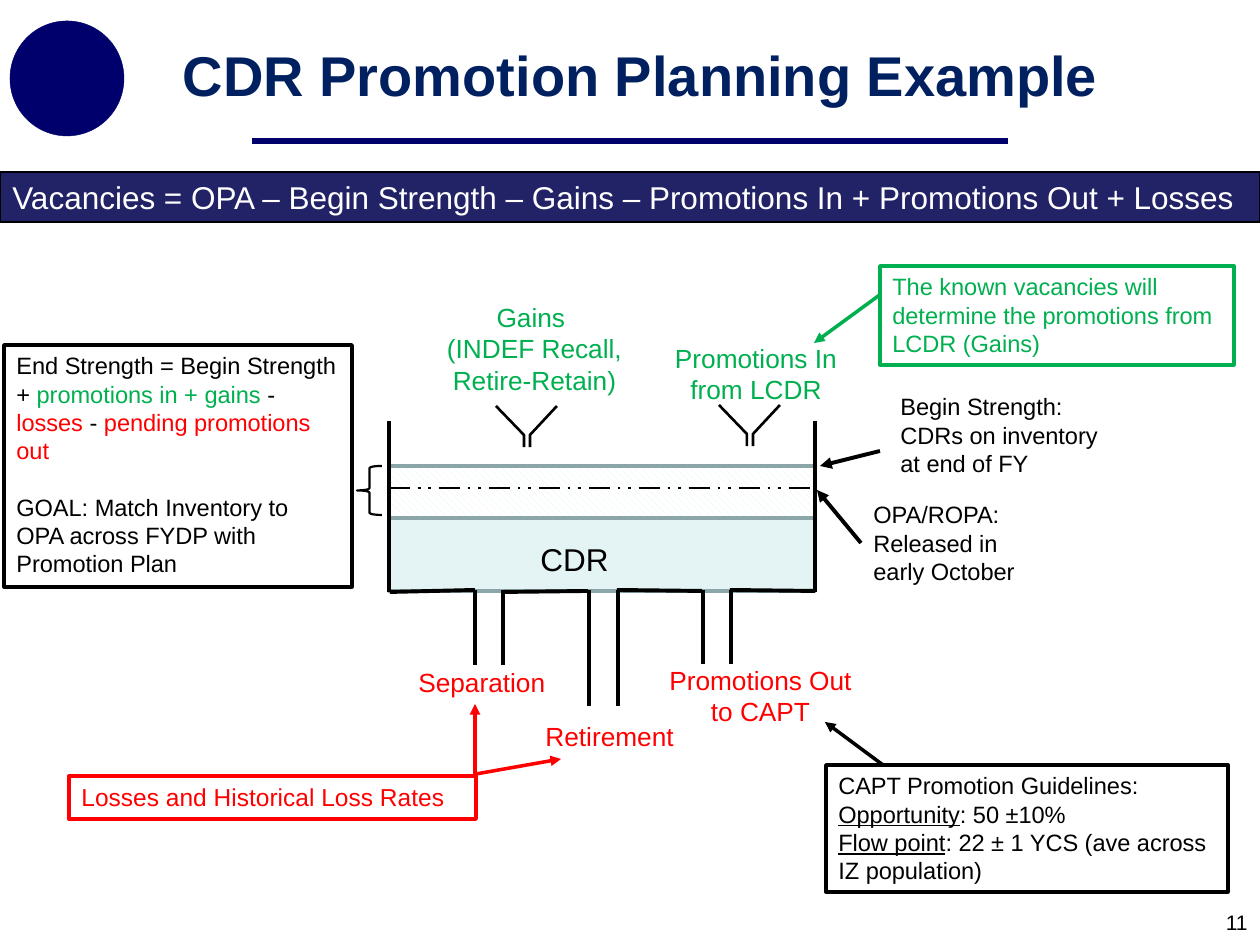
from pptx import Presentation
from pptx.dml.color import RGBColor
from pptx.enum.dml import MSO_LINE_DASH_STYLE, MSO_PATTERN_TYPE
from pptx.enum.shapes import MSO_CONNECTOR, MSO_SHAPE
from pptx.enum.text import MSO_ANCHOR, PP_ALIGN
from pptx.oxml.ns import qn
from pptx.util import Pt
from lxml.etree import SubElement

SCALE = 914400 / 126
BLACK = RGBColor(0, 0, 0)
WHITE = RGBColor(255, 255, 255)
RED = RGBColor(255, 0, 0)
GREEN = RGBColor(0, 176, 80)
TITLE_BLUE = RGBColor(0, 32, 96)
RULE_BLUE = RGBColor(0, 0, 108)
BANNER_BLUE = RGBColor(34, 34, 103)
WATER = RGBColor(228, 243, 244)
WATER_EDGE = RGBColor(138, 166, 168)


def emu(pixels):
    return round(pixels * SCALE)


def place(box, left, top, width, height):
    return [emu(value) for value in (box[0] + left, box[1] + top, width, height)]


def format_font(font, **values):
    color = values.pop("color", None)
    if color is not None:
        font.color.rgb = color
    for name, value in values.items():
        setattr(font, name, value)


def write(shape, paragraphs, size, color, align=PP_ALIGN.LEFT, gap=0):
    frame = shape.text_frame
    frame.word_wrap = True
    frame.vertical_anchor = MSO_ANCHOR.TOP
    for index, runs in enumerate(paragraphs):
        paragraph = frame.add_paragraph() if index else frame.paragraphs[0]
        paragraph.alignment = align
        if index and gap:
            paragraph.space_before = Pt(gap)
        for text, values in runs:
            run = paragraph.add_run()
            run.text = text
            format_font(run.font, **{"name": "Arial", "size": Pt(size), "color": color, **values})


def add_label(slide, box, bounds, lines, size, color, align=PP_ALIGN.LEFT):
    shape = slide.shapes.add_textbox(*place(box, *bounds))
    write(shape, [[(line, {})] for line in lines], size, color, align)
    return shape


def add_box(slide, box, bounds, line_color, width, fill=None, kind=MSO_SHAPE.RECTANGLE):
    shape = slide.shapes.add_shape(kind, *place(box, *bounds))
    shape.shadow.inherit = False
    if fill is None:
        shape.fill.background()
    else:
        shape.fill.solid()
        shape.fill.fore_color.rgb = fill
    shape.line.color.rgb = line_color
    shape.line.width = Pt(width)
    return shape


def add_line(slide, box, points, color=BLACK, width=2.25, arrow=False):
    left, top = box[:2]
    x1, y1, x2, y2 = points
    line = slide.shapes.add_connector(
        MSO_CONNECTOR.STRAIGHT, emu(left + x1), emu(top + y1), emu(left + x2), emu(top + y2))
    line.line.color.rgb = color
    line.line.width = Pt(width)
    properties = line._element.spPr
    if arrow:
        SubElement(properties.find(qn("a:ln")), qn("a:tailEnd"), type="triangle")
    SubElement(properties, qn("a:effectLst"))
    return line


def draw_header(slide, box):
    title = slide.shapes.title
    title.left, title.top, title.width, title.height = place(box, -72, 16, 1441, 116)
    write(title, [[("CDR Promotion Planning Example ", {"bold": True})]], 32, TITLE_BLUE, PP_ALIGN.CENTER)
    title.text_frame.vertical_anchor = MSO_ANCHOR.MIDDLE
    add_line(slide, box, (252, 141, 1008, 141), RULE_BLUE, 3)
    add_box(slide, box, (10, 21, 114, 115), RULE_BLUE, 0.25, RULE_BLUE, MSO_SHAPE.OVAL)


def draw_banner(slide, box):
    banner = add_box(slide, box, (0, 0, *box[2:]), BLACK, 0.75, BANNER_BLUE)
    formula = "Vacancies = OPA – Begin Strength – Gains – Promotions In + Promotions Out + Losses"
    write(banner, [[(formula, {})]], 18, WHITE)


def draw_funnel(slide, box):
    for edge, neck in ((0, 28), (61, 34)):
        builder = slide.shapes.build_freeform(box[0] + edge, box[1], SCALE)
        builder.add_line_segments(
            [(box[0] + neck, box[1] + 29), (box[0] + neck, box[1] + 41)], close=False)
        side = builder.convert_to_shape()
        side.shadow.inherit = False
        side.fill.background()
        side.line.color.rgb = BLACK
        side.line.width = Pt(1.5)


def draw_tank(slide, box):
    width = box[2]
    add_box(slide, box, (0, 68, width, 102), WATER_EDGE, 2, WATER)
    hatch = add_box(slide, box, (0, 45, width, 52), WATER_EDGE, 2)
    hatch.fill.patterned()
    hatch.fill.pattern = MSO_PATTERN_TYPE.WIDE_DOWNWARD_DIAGONAL
    hatch.fill.fore_color.rgb = WATER
    hatch.fill.back_color.rgb = WHITE
    for x in (0, width):
        add_line(slide, box, (x, 0, x, 171))
    for floor in ((86, 169, 1, 171), (199, 170, 115, 171), (228, 169, 313, 170), (341, 169, width, 170)):
        add_line(slide, box, floor)
    for left, right, bottom in ((86, 114, 244), (200, 229, 285), (314, 342, 243)):
        for x in (left, right):
            add_line(slide, box, (x, 169, x, bottom))
    level = add_line(slide, box, (0, 67, width, 67), width=1.5)
    level.line.dash_style = MSO_LINE_DASH_STYLE.DASH_DOT_DOT
    add_box(slide, box, (-32, 45, 25, 49), BLACK, 1.25, kind=MSO_SHAPE.LEFT_BRACE)
    for left, top in ((107, -15), (330, -16)):
        draw_funnel(slide, (box[0] + left, box[1] + top))


def draw_flow_labels(slide, box):
    center, left = PP_ALIGN.CENTER, PP_ALIGN.LEFT
    for bounds, lines, size, color, align in (
        ((31, -126, 229, 108), ["Gains ", "(INDEF Recall, Retire-Retain)"], 15, GREEN, center),
        ((260, -85, 214, 77), ["Promotions In from LCDR"], 15, GREEN, center),
        ((139, 113, 170, 50), ["CDR"], 18, BLACK, left),
        ((17, 239, 228, 44), ["Separation"], 15, RED, left),
        ((144, 293, 180, 44), ["Retirement"], 15, RED, left),
        ((260, 237, 223, 77), ["Promotions Out to CAPT"], 15, RED, center),
    ):
        add_label(slide, box, bounds, lines, size, color, align)


def draw_end_strength(slide, box):
    goal = add_box(slide, box, (0, 0, *box[2:]), BLACK, 2)
    gains, losses = {"color": GREEN}, {"color": RED}
    write(goal, [
        [("End Strength = Begin Strength + ", {}), ("promotions in + gains ", gains), ("-", {}),
         (" losses ", losses), ("-", {}), (" pending promotions out", losses)],
        [("GOAL: Match Inventory to OPA across FYDP with Promotion Plan", {})],
    ], 13.5, BLACK, gap=16)


def draw_inventory_notes(slide, box):
    vacancies = add_box(slide, box, (0, 0, 354, 99), GREEN, 2)
    write(vacancies, [[("The known vacancies will determine the promotions from LCDR (Gains)", {})]], 13.5, GREEN)
    add_line(slide, box, (1, 28, -66, 77), GREEN, 2, True)
    add_label(slide, box, (8, 120, 243, 98), ["Begin Strength: CDRs on inventory at end of FY"], 13.5, BLACK)
    add_line(slide, box, (0, 185, -60, 200), arrow=True)
    release = add_label(slide, box, (-19, 228, 184, 98), ["OPA/ROPA: Released in early October"], 13.5, BLACK)
    pointer = add_line(slide, box, (-19, 277, -63, 224), arrow=True)
    pointer.begin_connect(release, 1)


def draw_guidelines(slide, box):
    guidelines = add_box(slide, box, (0, 0, *box[2:]), BLACK, 2)
    underlined = {"underline": True}
    write(guidelines, [
        [("CAPT Promotion Guidelines:", {})],
        [("Opportunity", underlined), (": 50 ±10%", {})],
        [("Flow point", underlined), (": 22 ± 1 YCS (ave across IZ population)", {})],
    ], 13.5, BLACK)
    add_line(slide, box, (57, 0, -1, -43), width=2, arrow=True)


def draw_losses(slide, box):
    losses = add_box(slide, box, (0, 0, *box[2:]), RED, 2.25)
    write(losses, [[("Losses and Historical Loss Rates", {})]], 14, RED)
    for arrow in ((406, -2, 406, -72), (407, -2, 492, -17)):
        add_line(slide, box, arrow, RED, 2, True)


def main():
    presentation = Presentation()
    presentation.slide_width, presentation.slide_height = emu(1260), emu(945)
    slide = presentation.slides.add_slide(presentation.slide_layouts[5])
    draw_header(slide, (0, 0))
    draw_banner(slide, (0, 172, 1260, 50))
    draw_tank(slide, (389, 421, 426, 286))
    draw_flow_labels(slide, (389, 421))
    draw_end_strength(slide, (4, 345, 348, 242))
    draw_inventory_notes(slide, (880, 266))
    draw_guidelines(slide, (826, 765, 402, 127))
    draw_losses(slide, (69, 776, 407, 43))
    add_label(slide, (0, 0), (966, 903, 294, 42), ["11"], 12, BLACK, PP_ALIGN.RIGHT)
    presentation.save("out.pptx")


if __name__ == "__main__":
    main()
